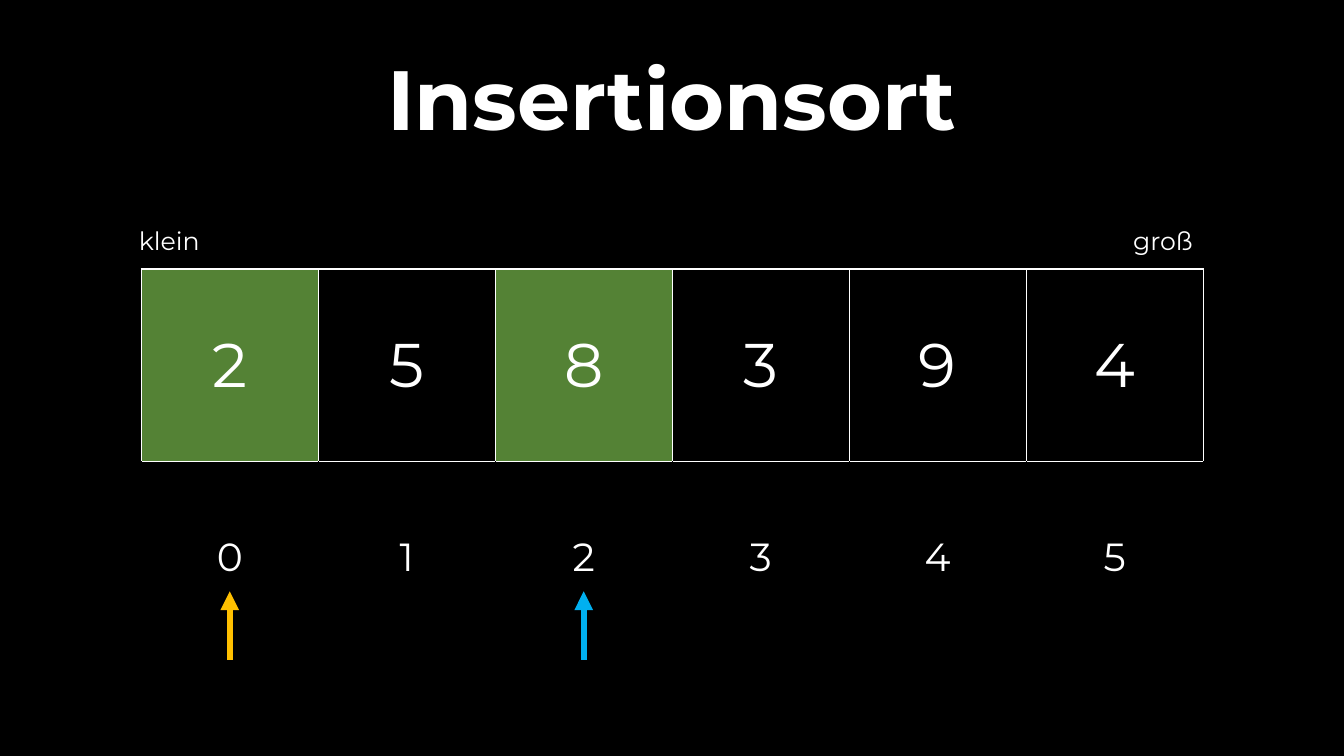
from lxml.etree import SubElement
from pptx import Presentation
from pptx.dml.color import RGBColor
from pptx.enum.shapes import MSO_CONNECTOR
from pptx.enum.text import MSO_ANCHOR, PP_ALIGN
from pptx.oxml.ns import qn
from pptx.util import Cm, Pt

FONT = "Montserrat"
WHITE, BLACK, GREEN = "FFFFFF", "000000", "548235"
BLUE, ORANGE = "00B0F0", "FFC000"

VALUES = [2, 5, 8, 3, 9, 4]
COMPARED = {0, 2}
ARRAY_LEFT, ARRAY_TOP = 3.56, 6.78
CELL_WIDTH, CELL_HEIGHT = 4.46, 4.85


def color(hex_code):
    return RGBColor.from_string(hex_code)


def write(frame, text, size, align, bold=False):
    frame.text = text
    paragraph = frame.paragraphs[0]
    paragraph.alignment = align
    font = paragraph.runs[0].font
    font.name, font.size, font.bold = FONT, Pt(size), bold
    font.color.rgb = color(WHITE)
    return paragraph


def add_label(slide, text, left, top, width, height, size, align, bold=False):
    frame = slide.shapes.add_textbox(Cm(left), Cm(top), Cm(width), Cm(height)).text_frame
    frame.word_wrap = True
    frame.vertical_anchor = MSO_ANCHOR.MIDDLE
    return write(frame, text, size, align, bold)


def set_borders(cell, left, right, top, bottom):
    properties = cell._tc.get_or_add_tcPr()
    for side, hex_code in zip("LRTB", (left, right, top, bottom)):
        border = SubElement(properties, qn(f"a:ln{side}"), w=str(Pt(1)))
        fill = SubElement(border, qn("a:solidFill"))
        SubElement(fill, qn("a:srgbClr"), val=hex_code)


def fill_cell(cell, text, size, edge, fill=None):
    cell.vertical_anchor = MSO_ANCHOR.MIDDLE
    write(cell.text_frame, text, size, PP_ALIGN.CENTER)
    # The top edge is white in both rows
    set_borders(cell, edge, edge, WHITE, edge)
    if fill:
        cell.fill.solid()
        cell.fill.fore_color.rgb = color(fill)
    else:
        cell.fill.background()


def add_array(slide):
    count = len(VALUES)
    array = slide.shapes.add_table(
        2, count, Cm(ARRAY_LEFT), Cm(ARRAY_TOP),
        Cm(CELL_WIDTH * count), Cm(CELL_HEIGHT * 2)).table
    array.first_row = array.horz_banding = False
    for index, value in enumerate(VALUES):
        fill_cell(array.cell(0, index), str(value), 44, WHITE,
                  GREEN if index in COMPARED else None)
        fill_cell(array.cell(1, index), str(index), 28, BLACK)
    # The values' bottom edge is the indices' top edge
    for index in range(count):
        array.columns[index].width = Cm(CELL_WIDTH)


def add_pointer(slide, index, hex_code):
    x = Cm(ARRAY_LEFT + (index + 0.5) * CELL_WIDTH)
    pointer = slide.shapes.add_connector(
        MSO_CONNECTOR.STRAIGHT, x, Cm(16.62), x, Cm(14.9))
    pointer.line.color.rgb = color(hex_code)
    pointer.line.width = Pt(4.5)
    SubElement(pointer.line._get_or_add_ln(), qn("a:tailEnd"), type="triangle")
    SubElement(pointer._element.spPr, qn("a:effectLst"))


def main():
    presentation = Presentation()
    presentation.slide_width, presentation.slide_height = Cm(33.87), Cm(19.05)
    slide = presentation.slides.add_slide(presentation.slide_layouts[6])
    slide.background.fill.solid()
    slide.background.fill.fore_color.rgb = color(BLACK)

    # Array with its indices
    add_array(slide)

    # Sort direction
    add_label(slide, "groß", 26.47, 5.54, 3.84, 1.03, 18, PP_ALIGN.RIGHT)
    add_label(slide, "klein", 3.25, 5.54, 3.84, 1.03, 18, PP_ALIGN.LEFT)

    # Pointers to the compared positions
    add_pointer(slide, 2, BLUE)
    add_pointer(slide, 0, ORANGE)

    # Title
    title = add_label(slide, "Insertionsort", 0.38, 0.79, 33.1, 3.61, 60,
                      PP_ALIGN.CENTER, bold=True)
    title.line_spacing = 0.9
    title.space_before = Pt(10)

    presentation.save("out.pptx")


if __name__ == "__main__":
    main()
